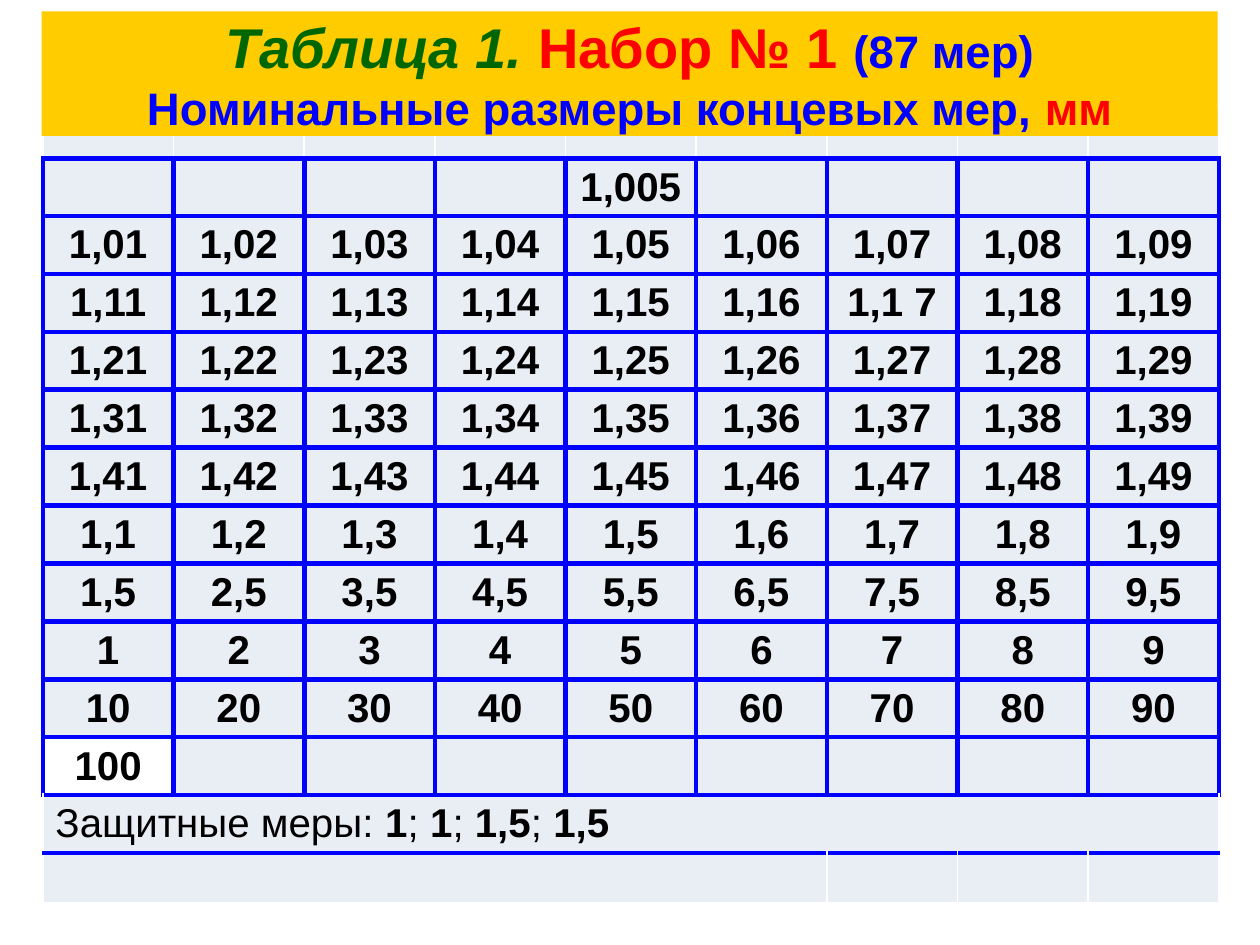
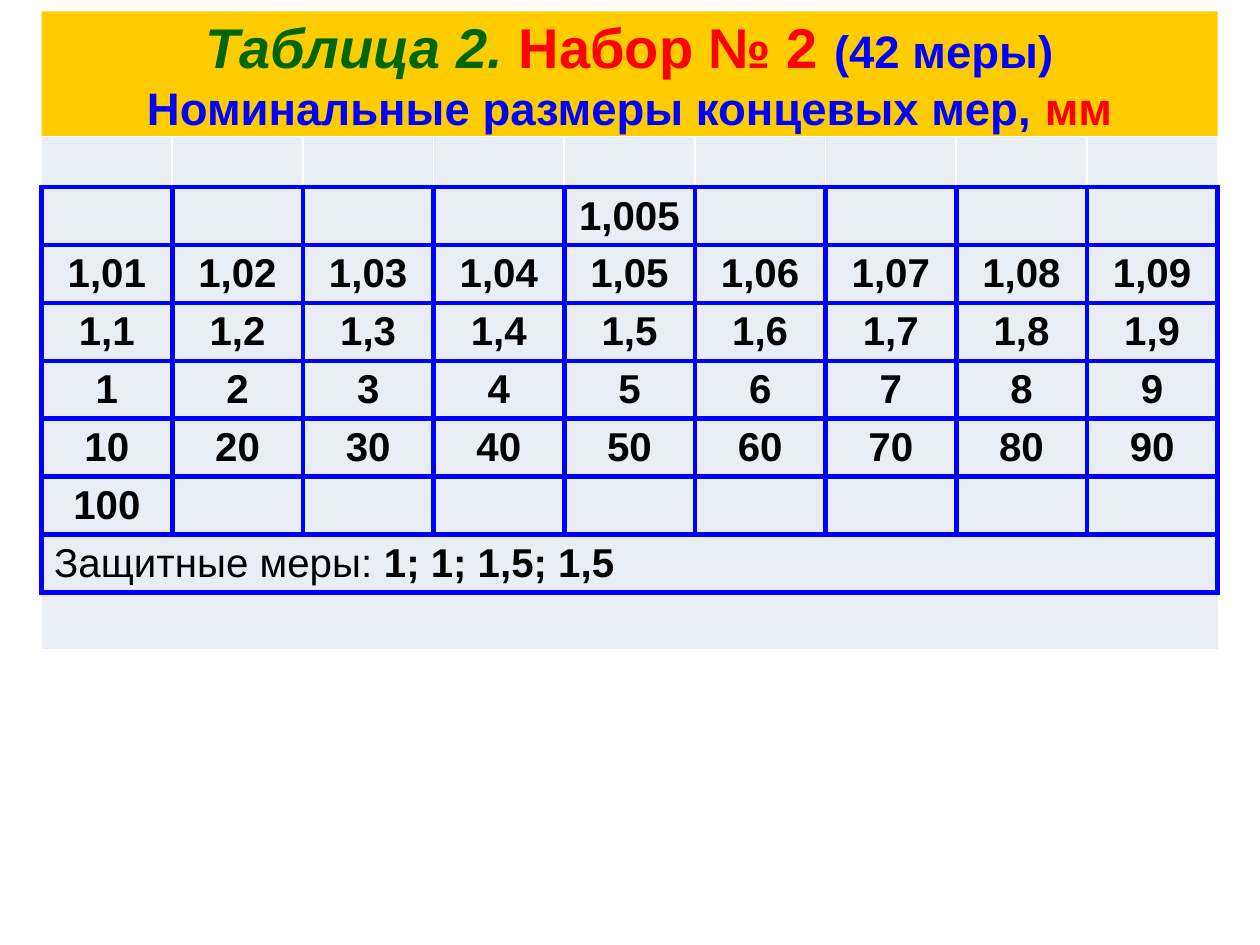
"""Build two slides with tables of gauge block sets."""
from lxml.etree import SubElement
from pptx import Presentation
from pptx.dml.color import RGBColor
from pptx.enum.shapes import MSO_SHAPE
from pptx.enum.text import MSO_ANCHOR, PP_ALIGN
from pptx.oxml.ns import qn
from pptx.util import Pt

BLUE = RGBColor(0x00, 0x00, 0xFF)
RED = RGBColor(0xFF, 0x00, 0x00)
GREEN = RGBColor(0x00, 0x66, 0x00)
GOLD = RGBColor(0xFF, 0xCC, 0x00)
PALE = RGBColor(0xE9, 0xED, 0xF4)
WHITE = RGBColor(0xFF, 0xFF, 0xFF)
BLACK = RGBColor(0x00, 0x00, 0x00)
FONT = "Arial"

COLS = 9
LEFT, WIDTH = 23.75, 672
ROW, HEAD = 33.1, 29.2
THICK, THIN, NONE = (BLUE, 3), (WHITE, 1), None
GRID = (THICK,) * 4
TOP = (THIN, THIN, THIN, THICK)

HALF = [""] * 4 + ["1,005"] + [""] * 4
UNITS = [str(n) for n in range(1, 10)]
TENS = [n + "0" for n in UNITS]
TENTHS = ["1," + n for n in UNITS]
HUNDRED = ["100"] + [""] * 8


def series(stem):
    return [stem + n for n in UNITS]


SETS = [
    {
        "name": "Таблица 1.", "kit": " Набор № 1 ", "count": "(87 мер)",
        "left": 24.5, "top": 61.2, "last": 28.6,
        "rows": [HALF, series("1,0"),
                 ["1,1 7" if v == "1,17" else v for v in series("1,1")],
                 series("1,2"), series("1,3"), series("1,4"), TENTHS,
                 [n + ",5" for n in UNITS], UNITS, TENS, HUNDRED],
        "guard": [("Защитные меры: ", False), ("1", True), ("; ", False),
                  ("1", True), (";", False), (" 1,5", True),
                  (";", False), (" 1,5", True)],
        "edge": (THIN, THICK, THIN, THICK),
        "foot": (THIN, THICK, THIN, THIN),
        "span": 6, "clear": "100",
    },
    {
        "name": "Таблица 2.", "kit": " Набор № 2 ", "count": "(42 меры)",
        "left": LEFT, "top": 77.75, "last": 32.6,
        "rows": [HALF, series("1,0"), TENTHS, UNITS, TENS, HUNDRED],
        "guard": [("Защитные меры:", False), (" 1; 1; 1,5; 1,5", True)],
        "edge": GRID,
        "foot": (NONE, THICK, NONE, NONE),
        "span": 9, "clear": None,
    },
]


def add_run(para, text, size, color, bold=True, italic=False):
    run = para.add_run()
    run.text = text
    font = run.font
    font.name, font.size = FONT, Pt(size)
    font.bold, font.italic = bold, italic
    font.color.rgb = color


def add_title(slide, kit):
    box = slide.shapes.add_shape(
        MSO_SHAPE.RECTANGLE, Pt(LEFT), Pt(6.5), Pt(WIDTH), Pt(71.25))
    box.shadow.inherit = False
    box.fill.solid()
    box.fill.fore_color.rgb = GOLD
    box.line.fill.background()
    frame = box.text_frame
    frame.word_wrap = True
    frame.vertical_anchor = MSO_ANCHOR.MIDDLE
    para = frame.paragraphs[0]
    para.alignment = PP_ALIGN.CENTER
    add_run(para, kit["name"], 32, GREEN, italic=True)
    add_run(para, kit["kit"], 32, RED)
    add_run(para, kit["count"], 26, BLUE)
    para.add_line_break()
    add_run(para, "Номинальные размеры концевых мер, ", 26, BLUE)
    add_run(para, "мм", 26, RED)


def set_edges(cell, edges):
    props = cell._tc.get_or_add_tcPr()
    for tag, edge in zip(("a:lnL", "a:lnT", "a:lnR", "a:lnB"), edges):
        line = SubElement(props, qn(tag))
        if edge:
            color, width = edge
            line.set("w", str(Pt(width)))
            fill = SubElement(line, qn("a:solidFill"))
            SubElement(fill, qn("a:srgbClr")).set("val", str(color))
        else:
            SubElement(line, qn("a:noFill"))
    order = ("a:lnL", "a:lnR", "a:lnT", "a:lnB")
    for spot, tag in enumerate(order):
        props.insert(spot, props.find(qn(tag)))


def style_cell(cell, edges, clear):
    if cell.is_spanned:
        edges = (NONE, edges[1], NONE, edges[3])
    set_edges(cell, edges)
    cell.vertical_anchor = MSO_ANCHOR.MIDDLE
    cell.margin_top = cell.margin_bottom = Pt(3.3)
    if clear:
        cell.fill.background()
    else:
        cell.fill.solid()
        cell.fill.fore_color.rgb = PALE


def add_grid(slide, kit):
    blank = [""] * COLS
    rows = [blank] + kit["rows"] + [blank, blank]
    edges = [TOP] + [GRID] * len(kit["rows"]) + [kit["edge"], kit["foot"]]
    highs = [HEAD] + [ROW] * (len(rows) - 2) + [kit["last"]]
    table = slide.shapes.add_table(
        len(rows), COLS, Pt(kit["left"]), Pt(kit["top"]),
        Pt(WIDTH), Pt(sum(highs))).table
    table.first_row = table.horz_banding = False
    for row, high in zip(table.rows, highs):
        row.height = Pt(high)
    foot = len(rows) - 1
    table.cell(foot - 1, 0).merge(table.cell(foot - 1, COLS - 1))
    table.cell(foot, 0).merge(table.cell(foot, kit["span"] - 1))
    for r, values in enumerate(rows):
        for c, text in enumerate(values):
            cell = table.cell(r, c)
            style_cell(cell, edges[r], text and text == kit["clear"])
            if text:
                para = cell.text_frame.paragraphs[0]
                para.alignment = PP_ALIGN.CENTER
                add_run(para, text, 23, BLACK)
    para = table.cell(foot - 1, 0).text_frame.paragraphs[0]
    for text, bold in kit["guard"]:
        add_run(para, text, 23, BLACK, bold)


def main():
    deck = Presentation()
    deck.slide_width, deck.slide_height = Pt(720), Pt(540)
    for kit in SETS:
        slide = deck.slides.add_slide(deck.slide_layouts[6])
        add_grid(slide, kit)
        add_title(slide, kit)
    deck.save("out.pptx")


if __name__ == "__main__":
    main()
